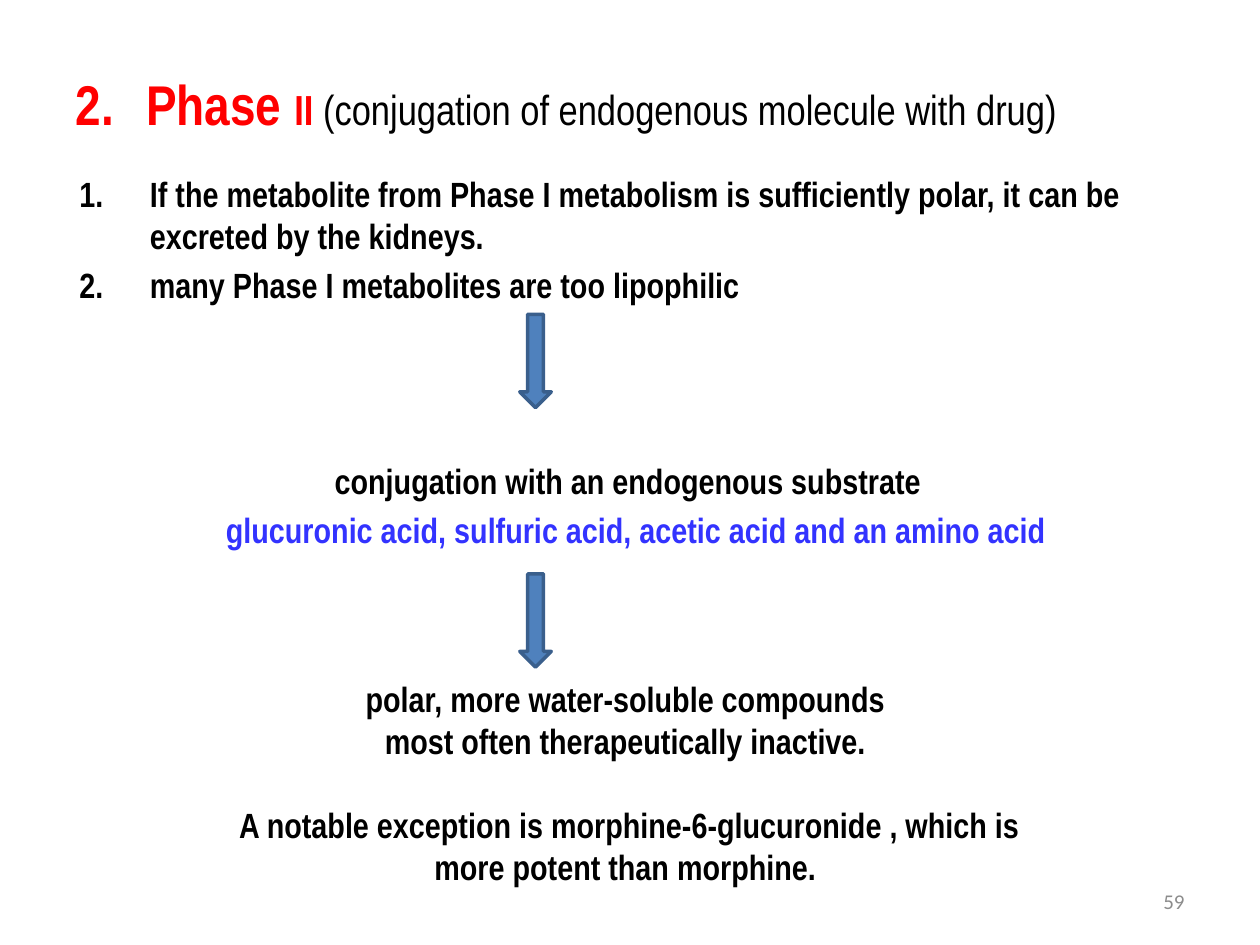
from lxml import etree
from pptx import Presentation
from pptx.dml.color import RGBColor
from pptx.enum.shapes import MSO_SHAPE
from pptx.enum.text import MSO_ANCHOR, MSO_AUTO_SIZE, PP_ALIGN
from pptx.oxml.ns import qn
from pptx.util import Inches, Pt

COLORS = {
    "ink": "000000", "red": "FF0000", "blue": "3333FF",
    "fill": "4F81BD", "edge": "3A5F8C", "gray": "8C8C8C",
}
HANG = 0.56


def rgb(name):
    return RGBColor.from_string(COLORS[name])


def write(para, text, size=20, color="ink", bold=True, font="Arial Narrow"):
    """Add one formatted run to a paragraph."""
    run = para.add_run()
    run.text = text
    run.font.name = font
    run.font.size = Pt(size)
    run.font.bold = bold
    run.font.color.rgb = rgb(color)


class Deck:
    def __init__(self):
        self.prs = Presentation()
        self.prs.slide_width = Inches(10)
        self.prs.slide_height = Inches(7.5)
        self.slide = self.prs.slides.add_slide(self.prs.slide_layouts[1])

    def frame(self, shape, box, anchor=MSO_ANCHOR.TOP):
        """Place a text shape and return its text frame."""
        shape.left, shape.top, shape.width, shape.height = map(Inches, box)
        frame = shape.text_frame
        frame.word_wrap = True
        frame.auto_size = MSO_AUTO_SIZE.NONE
        frame.vertical_anchor = anchor
        return frame

    def box(self, box, anchor=MSO_ANCHOR.TOP):
        shape = self.slide.shapes.add_textbox(*map(Inches, box))
        return self.frame(shape, box, anchor)

    def para(self, frame, align=PP_ALIGN.LEFT, before=0, hang=HANG, start=None, tint="ink"):
        """Return a fresh paragraph, numbered when start is given."""
        para = frame.paragraphs[0]
        if para.runs:
            para = frame.add_paragraph()
        para.alignment = align
        para.space_before = Pt(before)
        props = para._p.get_or_add_pPr()
        props.set("marL", str(Inches(hang)))
        props.set("indent", str(-Inches(hang)))
        if start is None:
            etree.SubElement(props, qn("a:buNone"))
        else:
            hue = etree.SubElement(props, qn("a:buClr"))
            etree.SubElement(hue, qn("a:srgbClr"), val=COLORS[tint])
            mark = etree.SubElement(props, qn("a:buAutoNum"), type="arabicPeriod")
            if start > 1:
                mark.set("startAt", str(start))
        return para

    def arrow(self, top):
        shape = self.slide.shapes.add_shape(
            MSO_SHAPE.RIGHT_ARROW, Inches(3.88), Inches(top), Inches(0.74), Inches(0.25))
        shape.rotation = 90
        shape.shadow.inherit = False
        shape.fill.solid()
        shape.fill.fore_color.rgb = rgb("fill")
        shape.line.color.rgb = rgb("edge")
        shape.line.width = Pt(2)


def main():
    deck = Deck()
    mid = PP_ALIGN.CENTER

    # Title
    title = deck.frame(deck.slide.shapes.title, (0.5, 0.5, 8.83, 0.64))
    head = deck.para(title, start=2, tint="red")
    write(head, "Phase ", size=32, color="red")
    write(head, "II ", size=24, color="red")
    write(head, "(conjugation of endogenous molecule with drug)", size=24, bold=False)

    # Numbered points, then the conjugation step
    body = deck.frame(deck.slide.placeholders[1], (0.53, 1.32, 8.97, 5.6))
    for text in (
        "If the metabolite from Phase I metabolism is sufficiently polar, "
        "it can be excreted by the kidneys.",
        "many Phase I metabolites are too lipophilic",
    ):
        write(deck.para(body, before=4, start=1), text)
    write(deck.para(body, mid, before=88), "conjugation with an endogenous substrate ")
    write(deck.para(body, mid, before=4),
          " glucuronic acid, sulfuric acid, acetic acid and an amino acid", color="blue")

    # Arrows between steps
    for top in (2.74, 4.8):
        deck.arrow(top)

    # Outcome
    end = deck.box((1.58, 5.33, 6.83, 1.78))
    for text in ("polar, more water-soluble compounds ",
                 "most often therapeutically inactive. "):
        write(deck.para(end, mid), text)
    write(deck.para(end, mid, before=24, hang=0),
          "A notable exception is morphine-6-glucuronide , "
          "which is more potent than morphine. ")

    # Slide number
    foot = deck.box((7.17, 6.95, 2.33, 0.4), MSO_ANCHOR.MIDDLE)
    write(deck.para(foot, PP_ALIGN.RIGHT, hang=0), "59",
          size=12, color="gray", bold=False, font="Calibri")

    deck.prs.save("out.pptx")


if __name__ == "__main__":
    main()
